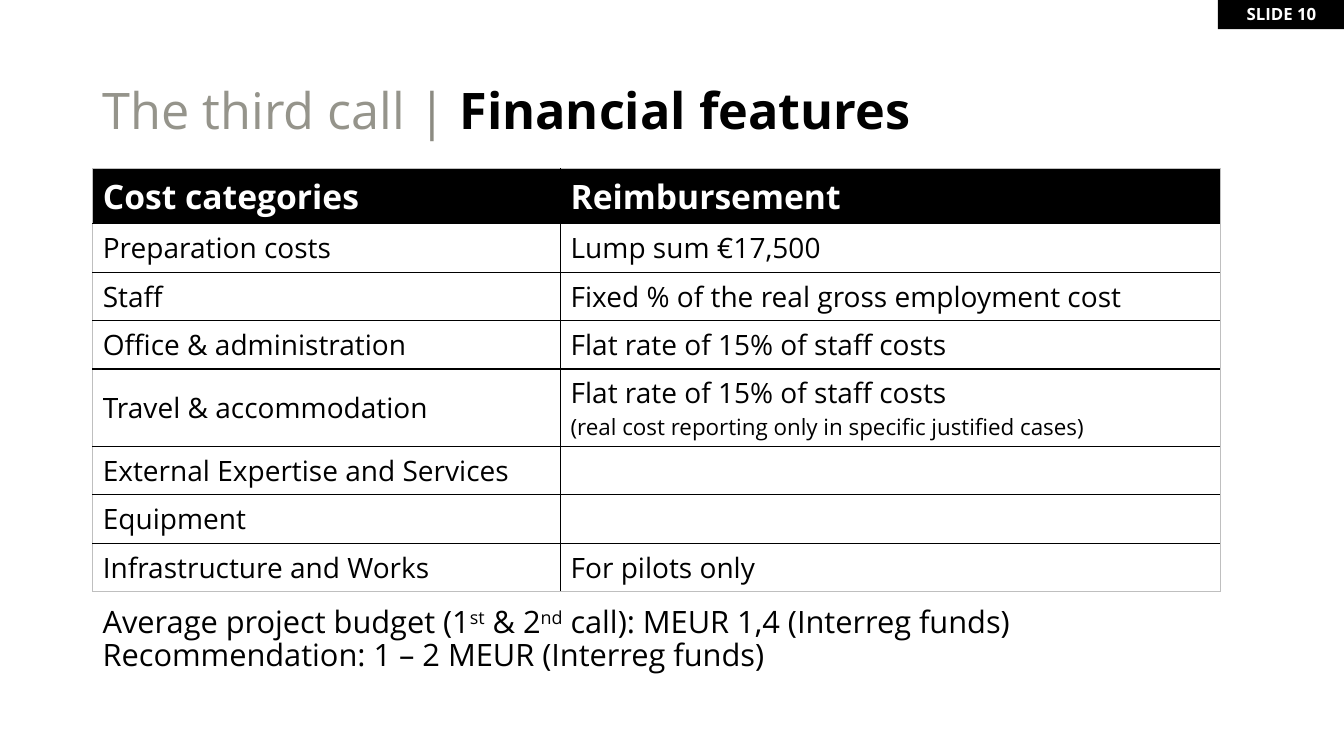
import pptx
import pptx.util
import pptx.dml.color
import pptx.enum.shapes
import pptx.enum.text
import pptx.oxml.ns
from lxml import etree

Inches = pptx.util.Inches
Pt = pptx.util.Pt
MID = pptx.enum.text.MSO_ANCHOR.MIDDLE
TOP = pptx.enum.text.MSO_ANCHOR.TOP
FONT = "Open Sans"
BLACK, WHITE, EDGE = "000000", "FFFFFF", "BFBFBF"

# A paragraph is a list of runs: (text, style)
BODY = {"size": 20}
HEAD = {"size": 24, "color": WHITE, "bold": True}
NOTE = {"size": 22}
RAISED = {"size": 22, "base": 30}

TAG = [[("SLIDE 10", {"size": 12, "color": WHITE, "bold": True})]]
TITLE = [[
    ("The third call ", {"size": 36, "color": "95948B"}),
    ("| ", {"size": 36, "color": "8C8B82"}),
    ("Financial features", {"size": 36, "bold": True}),
]]
BUDGET = [
    [("Average project budget (1", NOTE), ("st", RAISED), (" & 2", NOTE),
     ("nd", RAISED), (" call): MEUR 1,4 (Interreg funds)", NOTE)],
    [("Recommendation: 1 – 2 MEUR (Interreg funds)", NOTE)],
]
COSTS = [
    ("Cost categories", "Reimbursement"),
    ("Preparation costs", "Lump sum €17,500"),
    ("Staff", "Fixed % of the real gross employment cost"),
    ("Office & administration", "Flat rate of 15% of staff costs"),
    ("Travel & accommodation", "Flat rate of 15% of staff costs\n"
     "(real cost reporting only in specific justified cases)"),
    ("External Expertise and Services", ""),
    ("Equipment", ""),
    ("Infrastructure and Works", "For pilots only"),
]
WIDTHS = [4.64, 6.54]
HEIGHTS = [0.55] + [0.48] * 3 + [0.77] + [0.48] * 3
LEFT = 0.92


def rgb(code):
    return pptx.dml.color.RGBColor.from_string(code)


def write(frame, paras, spacing=None, align=None):
    for i, runs in enumerate(paras):
        para = frame.paragraphs[0] if i == 0 else frame.add_paragraph()
        para.line_spacing = spacing
        para.alignment = align
        for text, style in runs:
            run = para.add_run()
            run.text = text
            run.font.name = FONT
            run.font.size = Pt(style["size"])
            run.font.bold = style.get("bold", False)
            run.font.color.rgb = rgb(style.get("color", BLACK))
            if "base" in style:
                run.font._element.set("baseline", str(style["base"] * 1000))


def add_text(slide, top, height, paras, anchor):
    box = slide.shapes.add_textbox(
        Inches(LEFT), Inches(top), Inches(11.5), Inches(height))
    box.text_frame.word_wrap = True
    box.text_frame.vertical_anchor = anchor
    write(box.text_frame, paras, spacing=0.9)


def add_line(cell, side, color, width):
    """Draw one border of a cell; side is L, R, T or B."""
    name = pptx.oxml.ns.qn
    line = etree.SubElement(cell._tc.get_or_add_tcPr(), name("a:ln" + side),
                            w=str(Pt(width)))
    fill = etree.SubElement(line, name("a:solidFill"))
    etree.SubElement(fill, name("a:srgbClr"), val=color)


def add_table(slide):
    rows, cols = len(COSTS), len(WIDTHS)
    table = slide.shapes.add_table(
        rows, cols, Inches(LEFT), Inches(1.67),
        Inches(sum(WIDTHS)), Inches(sum(HEIGHTS))).table
    for col, width in zip(table.columns, WIDTHS):
        col.width = Inches(width)
    for r, texts in enumerate(COSTS):
        table.rows[r].height = Inches(HEIGHTS[r])
        for c, text in enumerate(texts):
            cell = table.cell(r, c)
            outer = {"L": c == 0, "R": c == cols - 1,
                     "T": r == 0, "B": r == rows - 1}
            for side, edge in outer.items():
                add_line(cell, side, *((EDGE, 0.5) if edge else (BLACK, 1)))
            cell.fill.solid()
            cell.fill.fore_color.rgb = rgb(WHITE if r else BLACK)
            cell.vertical_anchor = MID if r else TOP
            lines = text.split("\n") if text else []
            styles = [BODY if r else HEAD, {"size": 16}]
            write(cell.text_frame, [[pair] for pair in zip(lines, styles)])


def add_tag(slide):
    tag = slide.shapes.add_shape(
        pptx.enum.shapes.MSO_SHAPE.RECTANGLE,
        Inches(12.08), Inches(-0.01), Inches(1.26), Inches(0.3))
    tag.shadow.inherit = False
    tag.fill.solid()
    tag.fill.fore_color.rgb = rgb(BLACK)
    tag.line.fill.background()
    tag.text_frame.vertical_anchor = MID
    write(tag.text_frame, TAG, align=pptx.enum.text.PP_ALIGN.CENTER)


def main():
    deck = pptx.Presentation()
    deck.slide_width, deck.slide_height = Inches(13.33), Inches(7.5)
    slide = deck.slides.add_slide(deck.slide_layouts[6])
    add_tag(slide)
    add_text(slide, 5.97, 0.93, BUDGET, TOP)
    add_text(slide, 0.4, 1.45, TITLE, MID)
    add_table(slide)
    deck.save("out.pptx")


if __name__ == "__main__":
    main()
